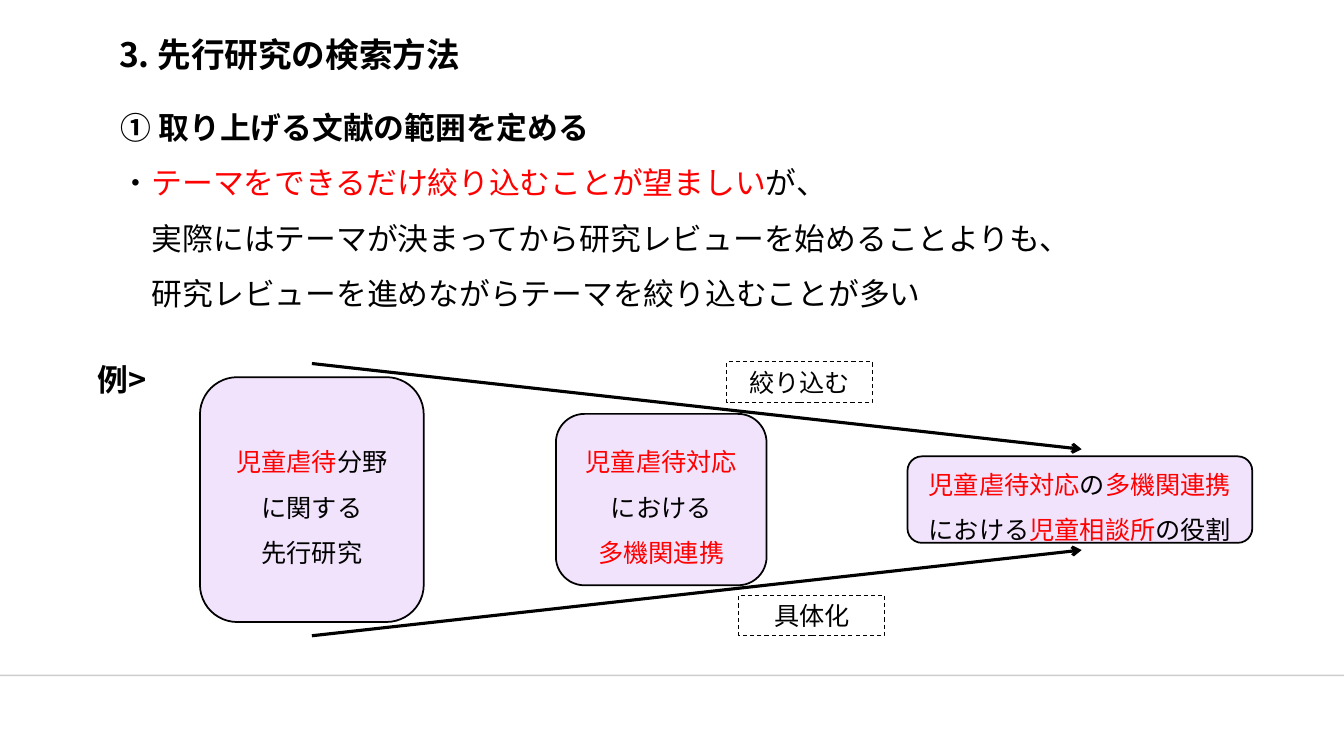
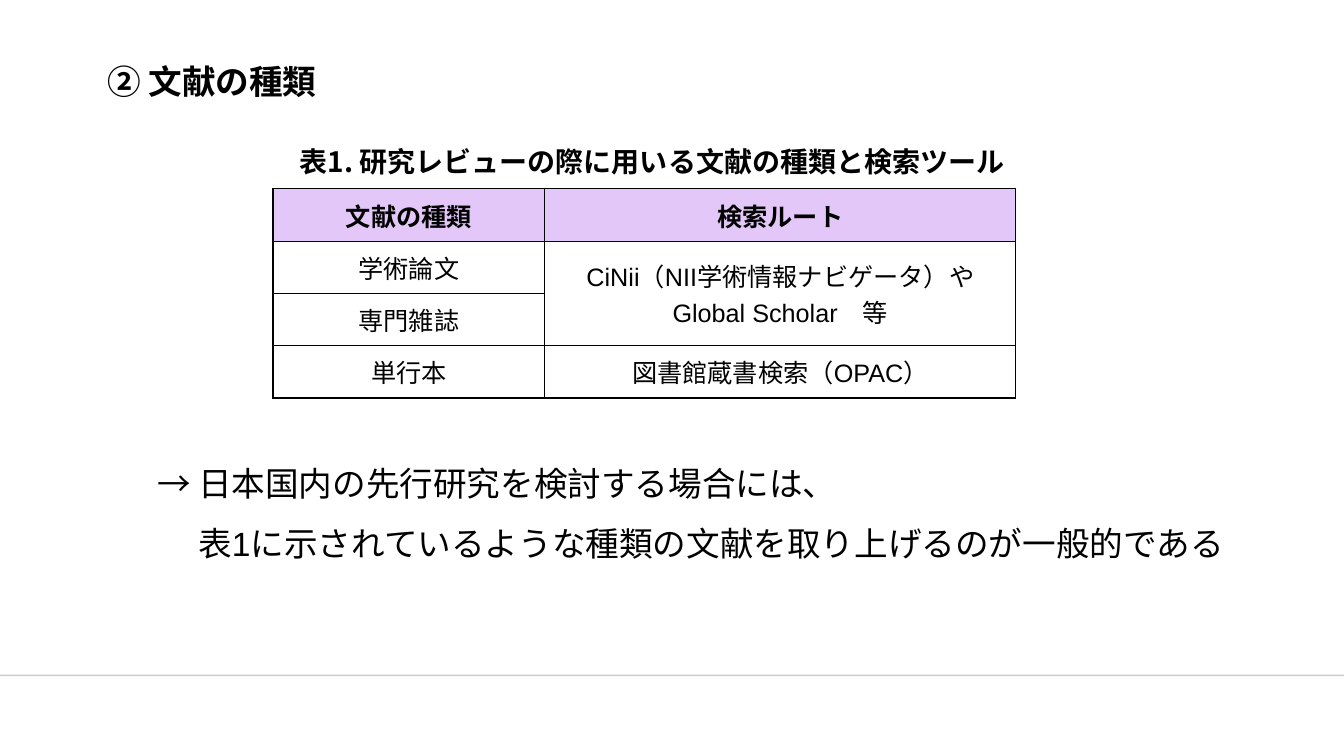
"""Build two slides on how to search for prior research."""
import lxml.etree
import pptx
import pptx.dml.color
import pptx.enum.dml
import pptx.enum.shapes
import pptx.enum.text
import pptx.oxml.ns
import pptx.util

Cm = pptx.util.Cm
Pt = pptx.util.Pt
ALIGN = pptx.enum.text.PP_ALIGN
ANCHOR = pptx.enum.text.MSO_ANCHOR
SHAPE = pptx.enum.shapes.MSO_SHAPE
qn = pptx.oxml.ns.qn

COLORS = {"text": "000000", "accent": "FF0000", "stage": "F2E3FC",
          "header": "E4C7F9", "rule": "000001", "panel": "FFFFFF"}
GOTHIC = "Noto Sans CJK JP"
SLIDE_WIDTH, SLIDE_HEIGHT = 33.87, 19.05
PANEL_TOP, PANEL_BOTTOM = 5.61, 17.02


def color(name):
    return pptx.dml.color.RGBColor.from_string(COLORS[name])


def place(box):
    return [Cm(length) for length in box]


def write(frame, lines, size, font=GOTHIC, bold=False, align=ALIGN.LEFT,
          spacing=1.0, anchor=ANCHOR.TOP):
    frame.word_wrap = True
    frame.auto_size = pptx.enum.text.MSO_AUTO_SIZE.NONE
    frame.vertical_anchor = anchor
    write_lines(frame, lines, size, font, bold, align, spacing)


def write_lines(frame, lines, size, font, bold, align, spacing=1.0):
    for number, line in enumerate(lines):
        paragraph = frame.add_paragraph() if number else frame.paragraphs[0]
        paragraph.alignment = align
        paragraph.line_spacing = spacing
        paragraph.font.size = Pt(size)
        paragraph.font.bold = bold
        paragraph.font.name = font
        paragraph.font.color.rgb = color("text")
        defaults = paragraph._p.pPr.find(qn("a:defRPr"))
        lxml.etree.SubElement(defaults, qn("a:ea"), typeface=GOTHIC)
        for part, text in enumerate(line.split("*")):
            if text:
                run = paragraph.add_run()
                run.text = text
                if part % 2:
                    run.font.color.rgb = color("accent")


def indent(paragraphs, length):
    for paragraph in paragraphs:
        paragraph._p.get_or_add_pPr().set("marL", str(int(Cm(length))))


def add_text(slide, box, lines, size, **style):
    frame = slide.shapes.add_textbox(*place(box)).text_frame
    write(frame, lines, size, **style)
    return frame


def add_line(slide, start, end, width, line_color="text", arrow=False):
    line = slide.shapes.add_connector(
        pptx.enum.shapes.MSO_CONNECTOR.STRAIGHT, *place(start + end))
    line.line.color.rgb = color(line_color)
    line.line.width = Pt(width)
    if arrow:
        lxml.etree.SubElement(line.line._get_or_add_ln(), qn("a:tailEnd"), type="arrow")
    lxml.etree.SubElement(line._element.spPr, qn("a:effectLst"))
    return line


def add_box(slide, preset, box, lines, line_width, spacing=1.0, fill=None, dashed=False):
    shape = slide.shapes.add_shape(preset, *place(box))
    shape.shadow.inherit = False
    if fill:
        shape.fill.solid()
        shape.fill.fore_color.rgb = color(fill)
    else:
        shape.fill.background()
    shape.line.color.rgb = color("text")
    shape.line.width = Pt(line_width)
    if dashed:
        shape.line.dash_style = pptx.enum.dml.MSO_LINE.DASH
    write(shape.text_frame, lines, 18, font="Calibri", align=ALIGN.CENTER,
          spacing=spacing, anchor=ANCHOR.MIDDLE)


def add_panel(slide, box, gradient=False):
    panel = slide.shapes.add_shape(SHAPE.RECTANGLE, *place(box))
    panel.shadow.inherit = False
    panel.line.fill.background()
    if gradient:
        panel.fill.gradient()
        panel.fill.gradient_angle = 270
        for stop in panel.fill.gradient_stops:
            stop.color.rgb = color("panel")
    else:
        panel.fill.solid()
        panel.fill.fore_color.rgb = color("panel")


def add_rule(slide):
    rule = add_line(slide, (0, PANEL_BOTTOM), (SLIDE_WIDTH, PANEL_BOTTOM), 1, "rule")
    tint = rule.line._get_or_add_ln().find(".//" + qn("a:srgbClr"))
    lxml.etree.SubElement(tint, qn("a:alpha"), val="20000")


def add_titled_slide(deck, title, box, band, spacing=1.0):
    slide = deck.slides.add_slide(deck.slide_layouts[5])
    heading = slide.shapes.title
    heading.left, heading.top, heading.width, heading.height = place(box)
    write(heading.text_frame, [title], 24, bold=True, spacing=spacing)
    add_panel(slide, (0, PANEL_TOP, SLIDE_WIDTH, PANEL_BOTTOM - PANEL_TOP), gradient=True)
    add_rule(slide)
    add_panel(slide, band)
    return slide


def add_funnel(slide, box):
    left, top, width, height = box
    middle = top + height / 2
    add_text(slide, (left, top, 2.18, 1.19), ["例>"], 22, bold=True)
    stages = [
        (2.83, 5.64, 6.17, ["*児童虐待*分野", "に関する", "先行研究"]),
        (11.8, 5.31, 4.32, ["*児童虐待対応*", "における", "*多機関連携*"]),
        (width - 8.69, 8.69, 2.18,
         ["*児童虐待対応*の*多機関連携*", "における*児童相談所*の役割"]),
    ]
    for offset, stage_width, stage_height, lines in stages:
        add_box(slide, SHAPE.ROUNDED_RECTANGLE,
                (left + offset, middle - stage_height / 2, stage_width, stage_height),
                lines, 1.25, spacing=1.5, fill="stage")
    for side in (-1, 1):
        add_line(slide, (left + 5.65, middle + side * 3.43),
                 (left + 25.05, middle + side * 1.27), 2.25, arrow=True)
    for offset, drop, label in [(16.1, 0.15, "絞り込む"), (16.41, 6.03, "具体化")]:
        add_box(slide, SHAPE.RECTANGLE, (left + offset, top + drop, 3.68, 1.02),
                [label], 0.75, dashed=True)


def add_border(cell):
    properties = cell._tc.get_or_add_tcPr()
    for position, side in enumerate(("a:lnL", "a:lnR", "a:lnT", "a:lnB")):
        edge = lxml.etree.Element(qn(side), w=str(int(Pt(1))))
        fill = lxml.etree.SubElement(edge, qn("a:solidFill"))
        lxml.etree.SubElement(fill, qn("a:srgbClr"), val=COLORS["text"])
        properties.insert(position, edge)


def add_source_table(slide, box):
    rows = [
        (["文献の種類"], ["検索ルート"]),
        (["学術論文"], ["CiNii（NII学術情報ナビゲータ）や", "Global Scholar　等"]),
        (["専門雑誌"], []),
        (["単行本"], ["図書館蔵書検索（OPAC）"]),
    ]
    table = slide.shapes.add_table(len(rows), 2, *place(box)).table
    table.horz_banding = False
    table.columns[0].width = Cm(6.85)
    table.columns[1].width = Cm(box[2] - 6.85)
    table.cell(1, 1).merge(table.cell(2, 1))
    for row, texts in enumerate(rows):
        for column, lines in enumerate(texts):
            cell = table.cell(row, column)
            cell.vertical_anchor = ANCHOR.MIDDLE
            if row == 0:
                cell.fill.solid()
                cell.fill.fore_color.rgb = color("header")
            else:
                cell.fill.background()
            add_border(cell)
            write_lines(cell.text_frame, lines, 18, "Arial", row == 0, ALIGN.CENTER)


def build_scope_slide(deck):
    slide = add_titled_slide(deck, "3. 先行研究の検索方法", (2.75, 0.73, 25.55, 1.27),
                             (6.07, 8.79, 25.07, 1.14))
    scope = add_text(slide, (2.8, 2.15, 28.98, 5.69), [
        "① 取り上げる文献の範囲を定める",
        "・*テーマをできるだけ絞り込むことが望ましい*が、",
        "実際にはテーマが決まってから研究レビューを始めることよりも、",
        "研究レビューを進めながらテーマを絞り込むことが多い",
    ], 22, spacing=1.5)
    scope.paragraphs[0].font.bold = True
    indent(scope.paragraphs[2:], 0.78)
    add_funnel(slide, (2.21, 8.97, 29.35, 7.24))


def build_source_slide(deck):
    slide = add_titled_slide(deck, "② 文献の種類", (2.45, 0.89, 10.72, 1.55),
                             (6.05, 9.14, 25.07, 1.14), spacing=1.5)
    add_source_table(slide, (6.88, 4.76, 18.72, 5.27))
    advice = add_text(slide, (3.71, 11.02, 27.81, 3.2), [
        "→ 日本国内の先行研究を検討する場合には、",
        "表1に示されているような種類の文献を取り上げるのが一般的である",
    ], 24, font="Arial", spacing=1.5)
    indent(advice.paragraphs[1:], 1.04)
    add_text(slide, (6.49, 3.09, 19.89, 1.35),
             ["表1. 研究レビューの際に用いる文献の種類と検索ツール"], 20,
             bold=True, align=ALIGN.CENTER, spacing=1.5)


def main():
    deck = pptx.Presentation()
    deck.slide_width, deck.slide_height = Cm(SLIDE_WIDTH), Cm(SLIDE_HEIGHT)
    build_scope_slide(deck)
    build_source_slide(deck)
    deck.save("out.pptx")


if __name__ == "__main__":
    main()
